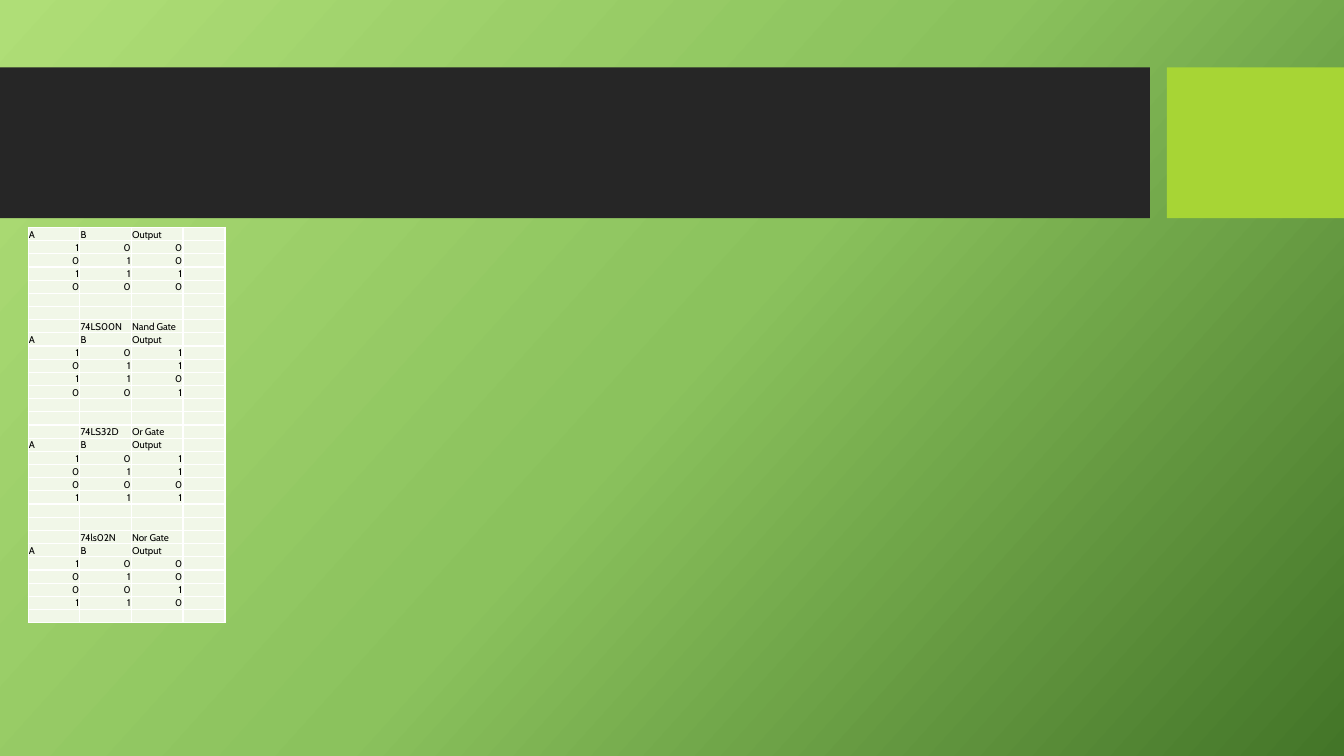
from copy import deepcopy
from dataclasses import dataclass

from lxml.etree import SubElement
from pptx import Presentation
from pptx.dml.color import RGBColor
from pptx.enum.shapes import MSO_SHAPE
from pptx.enum.text import MSO_ANCHOR, PP_ALIGN
from pptx.oxml.ns import qn
from pptx.util import Cm, Pt


@dataclass(frozen=True)
class Theme:
    backdrop: tuple = ((0, "AFDE77"), (0.5, "8BC25D"), (1, "437528"))
    title_band: str = "262626"
    accent: str = "A7D535"
    cell: str = "F1F7E8"
    grid: str = "FFFFFF"
    text: str = "000000"
    font: str = "Cabin"
    size: Pt = Pt(7)
    grid_width: Pt = Pt(1)


def add_cell_borders(cell):
    properties = cell._tc.get_or_add_tcPr()
    for side in ("a:lnL", "a:lnR", "a:lnT", "a:lnB"):
        border = SubElement(properties, qn(side), w=str(theme.grid_width))
        solid = SubElement(border, qn("a:solidFill"))
        SubElement(solid, qn("a:srgbClr"), val=theme.grid)


theme = Theme()
presentation = Presentation()
presentation.slide_width = Cm(33.87)
presentation.slide_height = Cm(19.05)
slide = presentation.slides.add_slide(presentation.slide_layouts[6])

backdrop = slide.background.fill
backdrop.gradient()
backdrop.gradient_angle = 360 - 42
stop_list = slide._element.find(".//" + qn("a:gsLst"))
stop_list.append(deepcopy(stop_list[-1]))
for stop, (position, color) in zip(backdrop.gradient_stops, theme.backdrop):
    stop.position = position
    stop.color.rgb = RGBColor.from_string(color)

for left, width, color in ((0, 28.98, theme.title_band), (29.41, 4.46, theme.accent)):
    band = slide.shapes.add_shape(MSO_SHAPE.RECTANGLE, Cm(left), Cm(1.7), Cm(width), Cm(3.8))
    band.shadow.inherit = False
    band.fill.solid()
    band.fill.fore_color.rgb = RGBColor.from_string(color)
    band.line.fill.background()

gates = [
    (None, ["100", "010", "111", "000"]),
    (("74LS00N", "Nand Gate"), ["101", "011", "110", "001"]),
    (("74LS32D", "Or Gate"), ["101", "011", "000", "111"]),
    (("74ls02N", "Nor Gate"), ["100", "010", "001", "110"]),
]
blank = ["", "", "", ""]
truth_rows = []
for heading, states in gates:
    if heading:
        truth_rows += [blank, blank, ["", *heading, ""]]
    truth_rows.append(["A", "B", "Output", ""])
    truth_rows += [[*state, ""] for state in states]
truth_rows.append(blank)

column_widths = [1.3, 1.3, 1.3, 1.06]
truth_table = slide.shapes.add_table(
    len(truth_rows), len(column_widths), Cm(0.71), Cm(5.73), Cm(sum(column_widths)), Cm(9.96)
).table
truth_table.first_row = False
truth_table.horz_banding = False
for column, width in zip(truth_table.columns, column_widths):
    column.width = Cm(width)

for row, values in zip(truth_table.rows, truth_rows):
    for cell, value in zip(row.cells, values):
        add_cell_borders(cell)
        cell.fill.solid()
        cell.fill.fore_color.rgb = RGBColor.from_string(theme.cell)
        cell.margin_left = cell.margin_right = cell.margin_top = Cm(0.02)
        cell.margin_bottom = 0
        cell.vertical_anchor = MSO_ANCHOR.BOTTOM
        paragraph = cell.text_frame.paragraphs[0]
        if value:
            paragraph.alignment = PP_ALIGN.RIGHT if value.isdigit() else PP_ALIGN.LEFT
            run = paragraph.add_run()
            run.text = value
            run.font.name = theme.font
            run.font.size = theme.size
            run.font.color.rgb = RGBColor.from_string(theme.text)
        else:
            SubElement(paragraph._p, qn("a:endParaRPr"), sz=str(theme.size.centipoints))

presentation.save("out.pptx")
